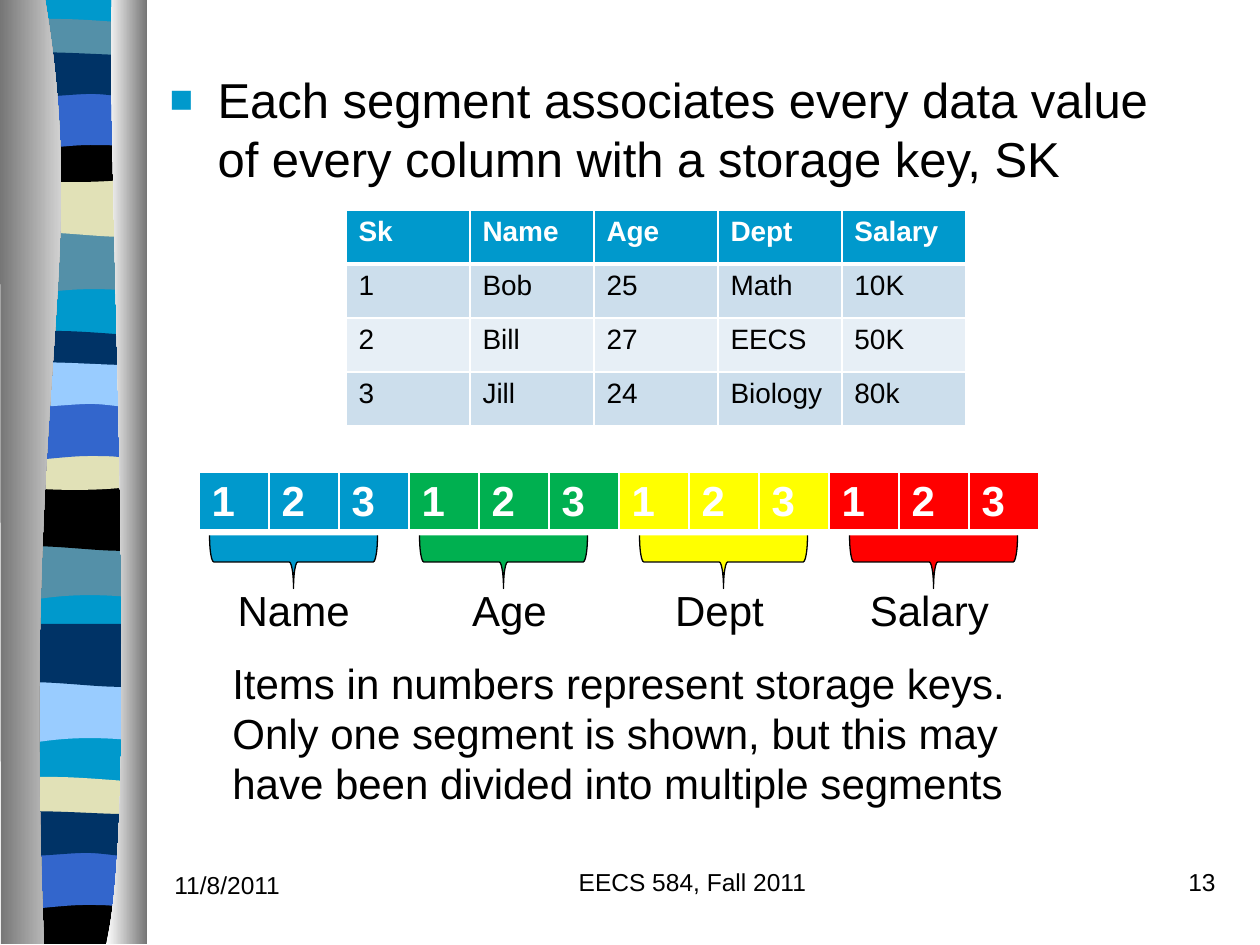
from lxml import etree
from pptx import Presentation
from pptx.dml.color import RGBColor
from pptx.enum.shapes import MSO_SHAPE
from pptx.enum.text import PP_ALIGN
from pptx.oxml.ns import qn
from pptx.util import Pt

EMU_PER_PX = 914400 / 126
SLIDE_SIZE = (1260, 945)
FONT = "Arial"
LEFT, CENTER, RIGHT = PP_ALIGN.LEFT, PP_ALIGN.CENTER, PP_ALIGN.RIGHT
RIGHT_BRACE = MSO_SHAPE.RIGHT_BRACE

BLACK = RGBColor(0x00, 0x00, 0x00)
WHITE = RGBColor(0xFF, 0xFF, 0xFF)
CYAN = RGBColor(0x00, 0x99, 0xCC)
TEAL = RGBColor(0x54, 0x90, 0xA8)
SAND = RGBColor(0xE1, 0xE1, 0xB7)
BLUE = RGBColor(0x33, 0x66, 0xCC)
NAVY = RGBColor(0x00, 0x33, 0x66)
SKY = RGBColor(0x99, 0xCC, 0xFF)
GRAY = RGBColor(0x76, 0x76, 0x76)
GREEN = RGBColor(0x00, 0xB0, 0x50)
YELLOW = RGBColor(0xFF, 0xFF, 0x00)
RED = RGBColor(0xFF, 0x00, 0x00)
ROW_DARK = RGBColor(0xCC, 0xDE, 0xEC)
ROW_LIGHT = RGBColor(0xE7, 0xEF, 0xF6)

# Outlines in px: a pair is a corner, three pairs are a Bezier curve
SWELL = [(137, 0), (137, 59), ((43, 49), (24, 69), (0, 59)), (0, 0)]
CREST = [(137, 0), (137, 60), ((113, 69), (42, 53), (0, 60)), (0, 0)]
LENS = [(137, 6), (137, 37), ((113, 42), (23, 42), (0, 37)), (0, 6),
        ((9, 0), (30, 1), (53, 1)), ((76, 1), (119, 5), (137, 6))]
CAP = [(137, 0), (137, 40), ((114, 48), (24, 48), (0, 40)), (0, 0),
       ((84, 6), (108, 0), (137, 0))]
ARCH = [(137, 0), (137, 59), ((115, 53), (106, 53), (83, 53)),
        ((60, 53), (20, 59), (0, 59)), (0, 0)]
RIPPLE = [(137, 6), (137, 45), ((128, 52), (107, 45), (84, 45)),
          ((62, 45), (14, 52), (0, 45)), (0, 6),
          ((19, 0), (93, 6), (116, 6)), ((139, 6), (132, 6), (137, 6))]
FOOT = [(137, 0), (137, 47), (0, 47), (0, 0), ((84, 6), (108, 0), (137, 0))]
BASE = [(137, 0), (137, 942), (0, 942), (0, 0)]

# Ribbon bands from back to front: outline, left, top, colour
BANDS = [
    (BASE, 7, -1, CYAN),
    (SWELL, 7, 233, TEAL), (CREST, 8, 174, SAND), (LENS, 8, 18, TEAL),
    (CAP, 7, 136, BLACK), (ARCH, 7, 92, BLUE), (RIPPLE, 7, 49, NAVY),
    (SWELL, 3, 539, TEAL), (CREST, 6, 488, BLACK), (LENS, 6, 330, NAVY),
    (CAP, 6, 444, SAND), (ARCH, 6, 403, BLUE), (RIPPLE, 6, 359, SKY),
    (SWELL, 3, 682, SKY), (CREST, 5, 624, NAVY), (LENS, 3, 776, SAND),
    (FOOT, 4, 897, BLACK), (ARCH, 2, 852, BLUE), (RIPPLE, 2, 808, NAVY),
]
LEFT_CURTAIN = [(45, -1), ((91, 272), (21, 373), (44, 944)), (1, 944), (0, -1)]
RIGHT_CURTAIN = [(112, -1), ((106, 158), (141, 814), (106, 944)),
                 (147, 944), (147, 0)]

PEOPLE = [["Sk", "Name", "Age", "Dept", "Salary"],
          ["1", "Bob", "25", "Math", "10K"],
          ["2", "Bill", "27", "EECS", "50K"],
          ["3", "Jill", "24", "Biology", "80k"]]
KEYS = ["1", "2", "3"]
# Column segments: label, colour, brace offset
SEGMENTS = [("Name ", CYAN, 0), ("Age", GREEN, 0),
            ("Dept", YELLOW, 10), ("Salary", RED, 10)]


def px(length):
    return round(length * EMU_PER_PX)


def bend_curves(shape, outline):
    """Join the three lines that stand for each curve into one Bezier."""
    lines = list(shape.element.iter(qn("a:lnTo")))
    for part in outline[1:]:
        if len(part) == 2:
            lines.pop(0)
            continue
        curve = etree.Element(qn("a:cubicBezTo"))
        lines[0].addprevious(curve)
        for _ in part:
            line = lines.pop(0)
            curve.append(line[0])
            line.getparent().remove(line)


def add_outline(slide, outline, left=0, top=0):
    points = []
    for part in outline:
        points.extend([part] if len(part) == 2 else part)
    points = [(px(left + x), px(top + y)) for x, y in points]
    builder = slide.shapes.build_freeform(*points[0], scale=1.0)
    builder.add_line_segments(points[1:], close=True)
    shape = builder.convert_to_shape()
    bend_curves(shape, outline)
    shape.shadow.inherit = False
    shape.line.fill.background()
    return shape


def add_band(slide, outline, left, top, color):
    shape = add_outline(slide, outline, left, top)
    shape.fill.solid()
    shape.fill.fore_color.rgb = color


def add_curtain(slide, outline, colors):
    fill = add_outline(slide, outline).fill
    fill.gradient()
    fill.gradient_angle = 0
    for stop, color in zip(fill.gradient_stops, colors):
        stop.color.rgb = color


def format_text(paragraph, size, color=BLACK, bold=False):
    for run in paragraph.runs:
        run.font.name = FONT
        run.font.size = Pt(size)
        run.font.bold = bold
        run.font.color.rgb = color


def add_text(slide, text, left, top, width, height, size, align=LEFT):
    box = slide.shapes.add_textbox(px(left), px(top), px(width), px(height))
    box.text_frame.word_wrap = True
    box.text_frame.text = text
    for paragraph in box.text_frame.paragraphs:
        paragraph.alignment = align
        format_text(paragraph, size)


def fill_body(slide, text):
    body = slide.placeholders[1]
    body.left, body.top, body.width, body.height = map(px, (157, 63, 1029, 221))
    body.text_frame.text = text
    paragraph = body.text_frame.paragraphs[0]
    format_text(paragraph, 28)
    properties = paragraph._p.get_or_add_pPr()
    properties.set("marL", str(px(48)))
    properties.set("indent", str(-px(48)))
    color = etree.SubElement(properties, qn("a:buClr"))
    etree.SubElement(color, qn("a:srgbClr"), val=str(CYAN))
    etree.SubElement(properties, qn("a:buSzPct"), val="80000")
    etree.SubElement(properties, qn("a:buFont"), typeface=FONT)
    etree.SubElement(properties, qn("a:buChar"), char="■")


def set_borders(cell, bottom):
    properties = cell._tc.get_or_add_tcPr()
    for side, width in (("L", 1), ("R", 1), ("T", 1), ("B", bottom)):
        line = etree.SubElement(properties, qn("a:ln" + side), w=str(Pt(width)))
        fill = etree.SubElement(line, qn("a:solidFill"))
        etree.SubElement(fill, qn("a:srgbClr"), val=str(WHITE))


def add_table(slide, rows, left, top, column_width, row_height, size, header_fills):
    columns = len(rows[0])
    frame = slide.shapes.add_table(len(rows), columns, px(left), px(top),
                                   px(column_width * columns),
                                   px(row_height * len(rows)))
    frame.table.horz_banding = False
    for r, row in enumerate(rows):
        header = r == 0
        for c, text in enumerate(row):
            cell = frame.table.cell(r, c)
            cell.text = text
            format_text(cell.text_frame.paragraphs[0], size,
                        WHITE if header else BLACK, header)
            set_borders(cell, 3 if header else 1)
            cell.fill.solid()
            body_fill = ROW_DARK if r % 2 else ROW_LIGHT
            cell.fill.fore_color.rgb = header_fills[c] if header else body_fill


def add_brace(slide, left, color):
    brace = slide.shapes.add_shape(RIGHT_BRACE, px(left), px(478), px(53), px(168))
    brace.rotation = 90
    brace.adjustments[0] = 0.08
    brace.shadow.inherit = False
    brace.fill.solid()
    brace.fill.fore_color.rgb = color
    brace.line.color.rgb = BLACK
    brace.line.width = Pt(0.75)


def main():
    presentation = Presentation()
    presentation.slide_width, presentation.slide_height = map(px, SLIDE_SIZE)
    slide = presentation.slides.add_slide(presentation.slide_layouts[1])
    title = slide.shapes.title.element
    title.getparent().remove(title)

    # Ribbon between two curtains
    for band in BANDS:
        add_band(slide, *band)
    add_curtain(slide, LEFT_CURTAIN, (GRAY, WHITE))
    add_curtain(slide, RIGHT_CURTAIN, (WHITE, GRAY))

    # Statement and example relation
    fill_body(slide, "Each segment associates every data value of every column "
                     "with a storage key, SK")
    add_table(slide, PEOPLE, 346, 210, 124, 54, 16, [CYAN] * 5)

    # Segment strip with one brace and label per column
    strip_fills = [color for _, color, _ in SEGMENTS for _ in KEYS]
    add_table(slide, [KEYS * len(SEGMENTS)], 199, 472, 70, 52, 24, strip_fills)
    for index, (label, color, offset) in enumerate(SEGMENTS):
        add_brace(slide, 267 + 210 * index + offset, color)
        add_text(slide, label, 210 + 210 * index, 578, 179, 64, 24, CENTER)
    add_text(slide, "Items in numbers represent storage keys.\n"
                    "Only one segment is shown, but this may have been divided "
                    "into multiple segments", 220, 651, 829, 165, 24)

    # Footer
    add_text(slide, "11/8/2011", 162, 864, 262, 63, 14)
    add_text(slide, "EECS 584, Fall 2011", 493, 861, 399, 63, 14, CENTER)
    add_text(slide, "13", 966, 861, 262, 63, 14, RIGHT)

    presentation.save("out.pptx")


if __name__ == "__main__":
    main()
